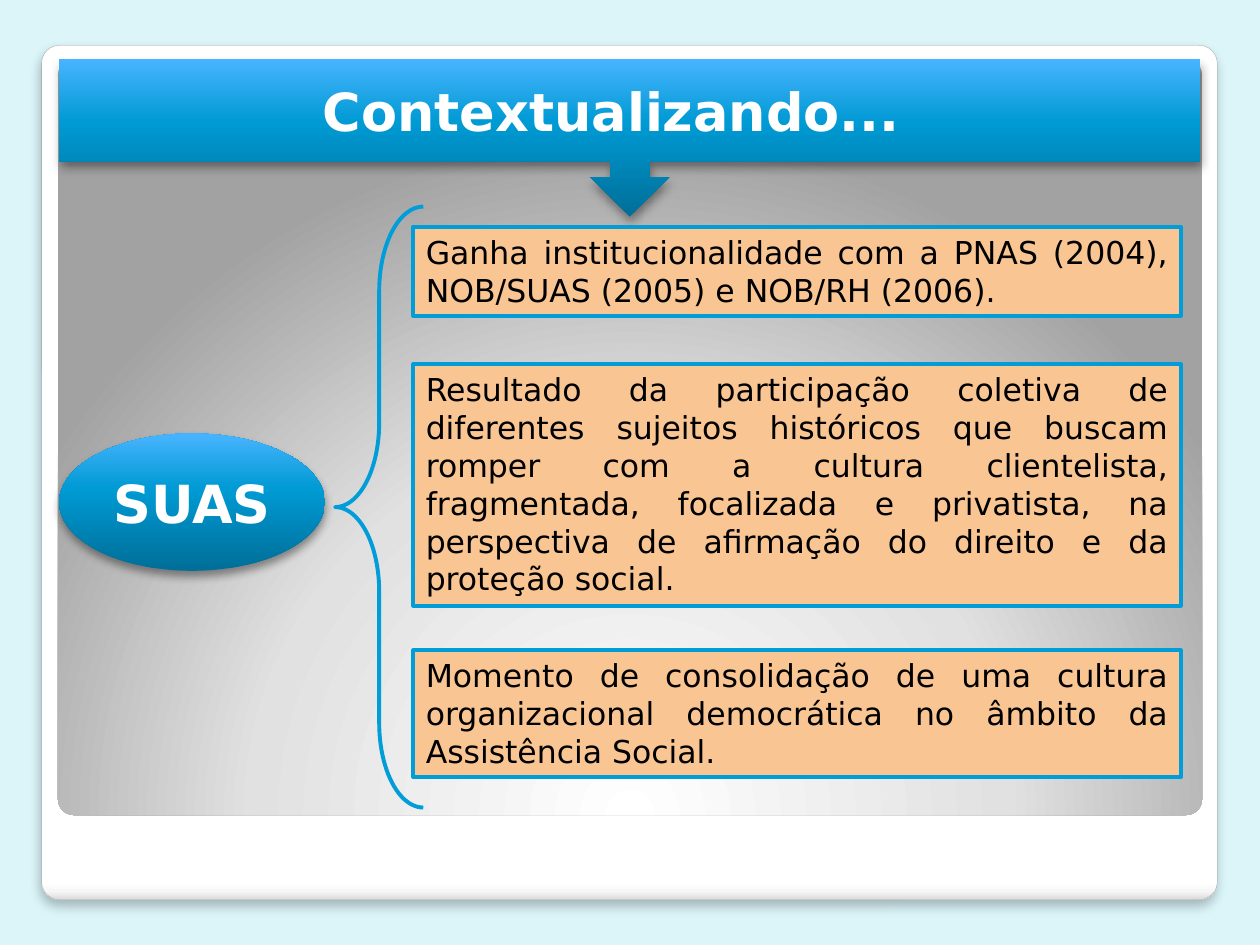
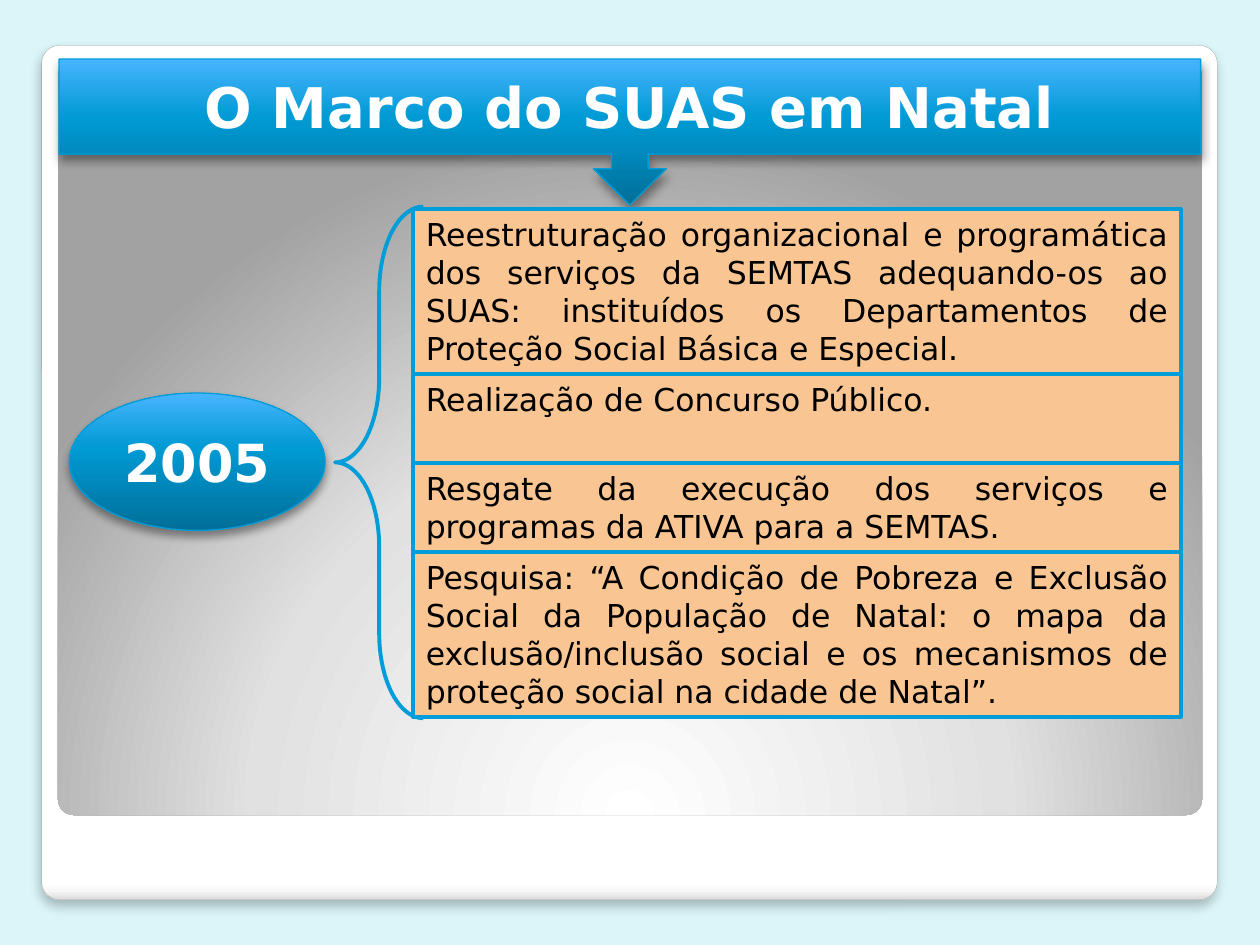
import pptx
import pptx.dml.color
import pptx.enum.shapes
import pptx.enum.text
import pptx.oxml
import pptx.oxml.ns
import pptx.util

Pt = pptx.util.Pt
Color = pptx.dml.color.RGBColor
Shape = pptx.enum.shapes.MSO_SHAPE
Align = pptx.enum.text.PP_ALIGN
Anchor = pptx.enum.text.MSO_ANCHOR

PALE_BLUE = Color(0xDB, 0xF5, 0xF9)
BLUE = Color(0x00, 0x9D, 0xD9)
PEACH = Color(0xF9, 0xC6, 0x93)
GRAY = Color(0xA4, 0xA4, 0xA4)
BLACK = Color(0x00, 0x00, 0x00)
WHITE = Color(0xFF, 0xFF, 0xFF)
FONT = "DejaVu Sans"

# Gradient stops: position in percent, colour
BLUE_STOPS = [(0, Color(0x00, 0x6F, 0x99)), (60, Color(0x00, 0x9A, 0xD4)),
              (100, Color(0x48, 0xB4, 0xFF))]
CARD_STOPS = [(0, WHITE), (98, WHITE), (99, Color(0xF7, 0xF7, 0xF7)),
              (100, Color(0xDA, 0xDA, 0xDA))]
PANEL_STOPS = [(0, WHITE), (55, Color(0xE1, 0xE1, 0xE1)), (100, Color(0xA2, 0xA2, 0xA2))]
UPWARD = '<a:lin ang="16200000" scaled="0"/>'
DOWNWARD = '<a:lin ang="5400000" scaled="0"/>'
FROM_BELOW = ('<a:path path="circle"><a:fillToRect l="50000" t="175000" '
              'r="50000" b="-75000"/></a:path>')

# Shadows: opacity in percent, blur and distance in points
CARD_SHADOW = (25, 6, 4)
BLUE_SHADOW = (40, 5.2, 3)

# Regions: left, top, width, height in points
CARD = (23.8, 25.9, 671.8, 488.2)
PANEL = (33.1, 33.8, 653.8, 432)
BOX_LEFT, BOX_WIDTH = 236.2, 438.5
LINE_HEIGHT, BOX_PADDING = 21.8, 7.2
BRACE_LEFT, BRACE_TOP, BRACE_WIDTH = 191.5, 118.1, 50.4

HEADING = {"size": Pt(30), "bold": True, "color": WHITE, "alignment": Align.CENTER,
           "anchor": Anchor.MIDDLE}
BODY = {"size": Pt(18), "bold": False, "color": BLACK, "alignment": Align.JUSTIFY,
        "anchor": Anchor.TOP}


def add_shape(slide, kind, box, line=None, line_width=0.75):
    """Add a shape without fill or shadow, outlined only if a line colour is given."""
    shape = slide.shapes.add_shape(kind, *map(Pt, box))
    shape.shadow.inherit = False
    shape.fill.background()
    if line is None:
        shape.line.fill.background()
    else:
        shape.line.color.rgb = line
        shape.line.width = Pt(line_width)
    return shape


def fill_gradient(shape, stops, direction):
    stop_xml = "".join(f'<a:gs pos="{position * 1000}"><a:srgbClr val="{color}"/></a:gs>'
                       for position, color in stops)
    gradient = pptx.oxml.parse_xml(
        f'<a:gradFill {pptx.oxml.ns.nsdecls("a")} rotWithShape="1">'
        f'<a:gsLst>{stop_xml}</a:gsLst>{direction}</a:gradFill>')
    properties = shape.element.spPr
    properties.replace(properties.find(pptx.oxml.ns.qn("a:noFill")), gradient)


def add_shadow(shape, opacity, blur, distance):
    effects = shape.element.spPr.find(pptx.oxml.ns.qn("a:effectLst"))
    effects.append(pptx.oxml.parse_xml(
        f'<a:outerShdw {pptx.oxml.ns.nsdecls("a")} blurRad="{Pt(blur)}" '
        f'dist="{Pt(distance)}" dir="5400000" algn="t" rotWithShape="0">'
        f'<a:srgbClr val="{BLACK}"><a:alpha val="{opacity * 1000}"/></a:srgbClr>'
        f'</a:outerShdw>'))


def write_text(shape, text, style):
    frame = shape.text_frame
    frame.word_wrap = True
    frame.vertical_anchor = style["anchor"]
    paragraph = frame.paragraphs[0]
    paragraph.alignment = style["alignment"]
    run = paragraph.add_run()
    run.text = text
    run.font.color.rgb = style["color"]
    for name, value in {"name": FONT, "size": style["size"], "bold": style["bold"]}.items():
        setattr(run.font, name, value)


def add_backdrop(slide):
    """White card with a gray panel inside."""
    card = add_shape(slide, Shape.ROUNDED_RECTANGLE, CARD, GRAY, 0.16)
    fill_gradient(card, CARD_STOPS, DOWNWARD)
    add_shadow(card, *CARD_SHADOW)
    panel = add_shape(slide, Shape.ROUNDED_RECTANGLE, PANEL)
    fill_gradient(panel, PANEL_STOPS, FROM_BELOW)
    for shape in (card, panel):
        shape.adjustments[0] = 0.021


def add_blue_shape(slide, kind, box, text, style, line):
    """Glossy blue shape with a heading, for the title and the topic."""
    shape = add_shape(slide, kind, box, line)
    fill_gradient(shape, BLUE_STOPS, UPWARD)
    add_shadow(shape, *BLUE_SHADOW)
    write_text(shape, text, style)
    return shape


def add_brace(slide, height):
    box = (BRACE_LEFT, BRACE_TOP, BRACE_WIDTH, height)
    brace = add_shape(slide, Shape.LEFT_BRACE, box, BLUE, 2.25)
    brace.adjustments[0] = 0.958
    brace.adjustments[1] = 0.5


def add_statements(slide, top, statements):
    """Column of boxes, each given as gap above, height in lines and text."""
    for gap, lines, text in statements:
        top += gap
        height = BOX_PADDING + lines * LINE_HEIGHT
        box = add_shape(slide, Shape.RECTANGLE, (BOX_LEFT, top, BOX_WIDTH, height), BLUE, 2.25)
        box.fill.solid()
        box.fill.fore_color.rgb = PEACH
        write_text(box, text, BODY)
        top += height


def add_topic_slide(presentation, title, title_height, title_size, title_margin, topic,
                    topic_box, brace_height, first_top, statements, line=None):
    slide = presentation.slides.add_slide(presentation.slide_layouts[6])
    add_backdrop(slide)
    title_box = (33.8, 33.8, 652.3, title_height)
    callout = add_blue_shape(slide, Shape.DOWN_ARROW_CALLOUT, title_box, title,
                             {**HEADING, "size": Pt(title_size)}, line)
    callout.text_frame.margin_right = Pt(title_margin)
    add_brace(slide, brace_height)
    add_blue_shape(slide, Shape.OVAL, topic_box, topic, HEADING, line)
    add_statements(slide, first_top, statements)


def main():
    presentation = pptx.Presentation()
    presentation.slide_width, presentation.slide_height = Pt(720), Pt(540)
    background = presentation.slide_master.background.fill
    background.solid()
    background.fore_color.rgb = PALE_BLUE

    add_topic_slide(
        presentation, title="Contextualizando...", title_height=90, title_size=30,
        title_margin=28, topic="SUAS", topic_box=(33.8, 247.7, 151.9, 78.5),
        brace_height=343.4, first_top=129.6, statements=[
            (0, 2, "Ganha institucionalidade com a PNAS (2004), NOB/SUAS (2005) e "
                   "NOB/RH (2006)."),
            (27.7, 6, "Resultado da participação coletiva de diferentes sujeitos históricos "
                      "que buscam romper com a cultura clientelista, fragmentada, "
                      "focalizada e privatista, na perspectiva de afirmação do direito e "
                      "da proteção social."),
            (25.4, 3, "Momento de consolidação de uma cultura organizacional democrática "
                      "no âmbito da Assistência Social."),
        ])
    add_topic_slide(
        presentation, title="O Marco do SUAS em Natal", title_height=83.5, title_size=32,
        title_margin=7.2, topic="2005", topic_box=(39.6, 224.6, 146.2, 78.5),
        brace_height=292.3, first_top=119.5, line=BLUE, statements=[
            (0, 4, "Reestruturação organizacional e programática dos serviços da SEMTAS "
                   "adequando-os ao SUAS: instituídos os Departamentos de Proteção Social "
                   "Básica e Especial."),
            (0, 2, "Realização de Concurso Público."),
            (0, 2, "Resgate da execução dos serviços e programas da ATIVA para a SEMTAS."),
            (0, 4, "Pesquisa: “A Condição de Pobreza e Exclusão Social da População de "
                   "Natal: o mapa da exclusão/inclusão social e os mecanismos de proteção "
                   "social na cidade de Natal”."),
        ])
    presentation.save("out.pptx")


if __name__ == "__main__":
    main()
